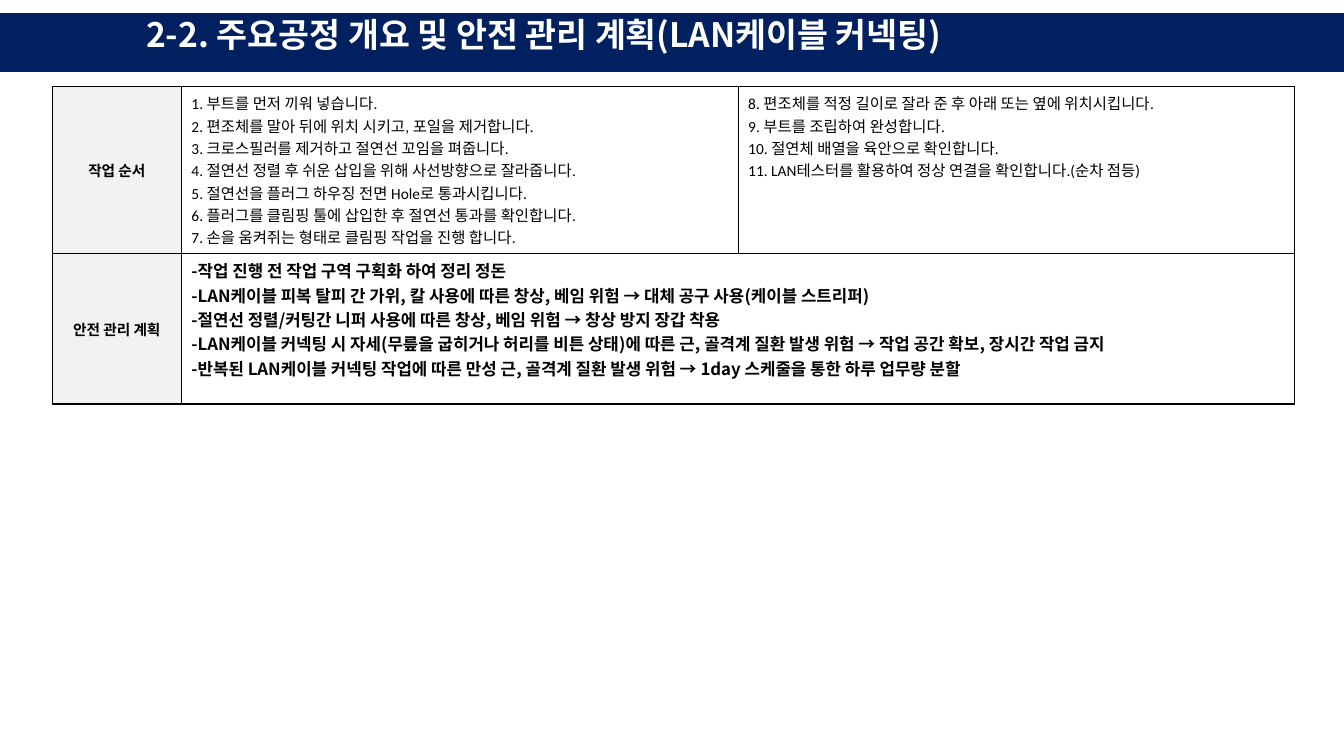
"""Build the LAN cable connecting slide: work order and safety plan."""
from dataclasses import dataclass

from lxml import etree
from pptx import Presentation
from pptx.dml.color import RGBColor
from pptx.enum.shapes import MSO_SHAPE
from pptx.enum.text import MSO_ANCHOR, MSO_AUTO_SIZE, PP_ALIGN
from pptx.oxml.ns import qn
from pptx.slide import Slide
from pptx.table import _Cell
from pptx.text.text import TextFrame
from pptx.util import Length, Pt

RECTANGLE = MSO_SHAPE.RECTANGLE
TOP, MIDDLE = MSO_ANCHOR.TOP, MSO_ANCHOR.MIDDLE
LEFT, CENTER = PP_ALIGN.LEFT, PP_ALIGN.CENTER
NO_AUTOFIT = MSO_AUTO_SIZE.NONE
TITLE_ONLY = 5


@dataclass(frozen=True)
class Theme:
    """Colours, fonts and type sizes of the slide."""
    navy: RGBColor = RGBColor(0x00, 0x20, 0x60)
    white: RGBColor = RGBColor(0xFF, 0xFF, 0xFF)
    black: RGBColor = RGBColor(0x00, 0x00, 0x00)
    grey: RGBColor = RGBColor(0xF2, 0xF2, 0xF2)
    korean: str = "Noto Sans CJK KR"
    latin: str = "Calibri"
    title: Length = Pt(24)
    label: Length = Pt(10.5)
    step: Length = Pt(11)
    safety: Length = Pt(12)
    border: Length = Pt(1)


THEME = Theme()


@dataclass(frozen=True)
class TextStyle:
    """Look of the paragraphs in one text frame."""
    size: Length
    font: str
    bold: bool = True
    color: RGBColor = THEME.black
    align: PP_ALIGN = LEFT


@dataclass(frozen=True)
class CellContent:
    """Place, wording and look of one table cell."""
    row: int
    column: int
    lines: tuple[str, ...]
    style: TextStyle
    fill: RGBColor = THEME.white
    anchor: MSO_ANCHOR = TOP


TITLE = TextStyle(THEME.title, THEME.korean, color=THEME.white)
LABEL = TextStyle(THEME.label, THEME.latin, align=CENTER)
STEP = TextStyle(THEME.step, THEME.latin, bold=False)
SAFETY = TextStyle(THEME.safety, THEME.korean)

TITLE_TEXT = "2-2. 주요공정 개요 및 안전 관리 계획(LAN케이블 커넥팅)"
STEPS = (
    "부트를 먼저 끼워 넣습니다.",
    "편조체를 말아 뒤에 위치 시키고, 포일을 제거합니다.",
    "크로스필러를 제거하고 절연선 꼬임을 펴줍니다.",
    "절연선 정렬 후 쉬운 삽입을 위해 사선방향으로 잘라줍니다.",
    "절연선을 플러그 하우징 전면 Hole로 통과시킵니다.",
    "플러그를 클림핑 툴에 삽입한 후 절연선 통과를 확인합니다.",
    "손을 움켜쥐는 형태로 클림핑 작업을 진행 합니다.",
    "편조체를 적정 길이로 잘라 준 후 아래 또는 옆에 위치시킵니다.",
    "부트를 조립하여 완성합니다.",
    "절연체 배열을 육안으로 확인합니다.",
    "LAN테스터를 활용하여 정상 연결을 확인합니다.(순차 점등)",
)
NUMBERED_STEPS = tuple(f"{number}. {step}" for number, step in enumerate(STEPS, 1))
FIRST_COLUMN_STEPS = 7
SAFETY_PLAN = (
    "-작업 진행 전 작업 구역 구획화 하여 정리 정돈",
    "-LAN케이블 피복 탈피 간 가위, 칼 사용에 따른 창상, 베임 위험 → 대체 공구 사용(케이블 스트리퍼)",
    "-절연선 정렬/커팅간 니퍼 사용에 따른 창상, 베임 위험 → 창상 방지 장갑 착용",
    "-LAN케이블 커넥팅 시 자세(무릎을 굽히거나 허리를 비튼 상태)에 따른 근, 골격계 질환 발생 위험 "
    "→ 작업 공간 확보, 장시간 작업 금지",
    "-반복된 LAN케이블 커넥팅 작업에 따른 만성 근, 골격계 질환 발생 위험 "
    "→ 1day 스케줄을 통한 하루 업무량 분할",
)
CELLS = (
    CellContent(0, 0, ("작업 순서",), LABEL, THEME.grey, MIDDLE),
    CellContent(0, 1, NUMBERED_STEPS[:FIRST_COLUMN_STEPS], STEP),
    CellContent(0, 2, NUMBERED_STEPS[FIRST_COLUMN_STEPS:], STEP),
    CellContent(1, 0, ("안전 관리 계획",), LABEL, THEME.grey, MIDDLE),
    CellContent(1, 1, SAFETY_PLAN, SAFETY),
)
COLUMN_WIDTHS = (Pt(92.2), Pt(397.7), Pt(397.7))
ROW_HEIGHTS = (Pt(107.7), Pt(107.7))


def write_lines(frame: TextFrame, lines: tuple[str, ...], style: TextStyle) -> None:
    """Write one paragraph per line in the given style."""
    for index, line in enumerate(lines):
        para = frame.paragraphs[0] if index == 0 else frame.add_paragraph()
        para.alignment = style.align
        span = para.add_run()
        span.text = line
        span.font.size = style.size
        span.font.bold = style.bold
        span.font.name = style.font
        span.font.color.rgb = style.color
        properties = span.font._element
        east_asian = etree.SubElement(properties, qn("a:ea"))
        east_asian.set("typeface", THEME.korean)


def draw_borders(cell: _Cell) -> None:
    """Draw a solid line on all four sides of a cell."""
    properties = cell._tc.get_or_add_tcPr()
    for index, side in enumerate(("a:lnL", "a:lnR", "a:lnT", "a:lnB")):
        line = etree.Element(qn(side), w=str(THEME.border))
        fill = etree.SubElement(line, qn("a:solidFill"))
        etree.SubElement(fill, qn("a:srgbClr"), val=str(THEME.black))
        properties.insert(index, line)


def draw_title(page: Slide) -> None:
    """Draw the navy bar and set the title on top of it."""
    bar = page.shapes.add_shape(RECTANGLE, Pt(0), Pt(10), Pt(960), Pt(41))
    bar.shadow.inherit = False
    bar.fill.solid()
    bar.fill.fore_color.rgb = THEME.navy
    bar.line.color.rgb = THEME.navy
    bar.line.width = THEME.border

    title = page.shapes.title
    title.left, title.top, title.width, title.height = Pt(97.2), Pt(10), Pt(765.4), Pt(41)
    frame = title.text_frame
    frame.auto_size = NO_AUTOFIT
    frame.word_wrap = True
    frame.vertical_anchor = TOP
    frame.margin_top = frame.margin_bottom = Pt(0)
    write_lines(frame, (TITLE_TEXT,), TITLE)
    bar.element.addnext(title.element)


def draw_plan(page: Slide) -> None:
    """Draw the table of work steps and safety measures."""
    table = page.shapes.add_table(
        len(ROW_HEIGHTS), len(COLUMN_WIDTHS), Pt(37.4), Pt(62),
        sum(COLUMN_WIDTHS), sum(ROW_HEIGHTS),
    ).table
    table.first_row = table.horz_banding = False
    for column, width in zip(table.columns, COLUMN_WIDTHS):
        column.width = width
    for row, height in zip(table.rows, ROW_HEIGHTS):
        row.height = height
    table.cell(1, 1).merge(table.cell(1, 2))
    for content in CELLS:
        cell = table.cell(content.row, content.column)
        cell.vertical_anchor = content.anchor
        write_lines(cell.text_frame, content.lines, content.style)
    for cell in table.iter_cells():
        cell.fill.solid()
        cell.fill.fore_color.rgb = THEME.white
        draw_borders(cell)
    for content in CELLS:
        table.cell(content.row, content.column).fill.fore_color.rgb = content.fill


def main() -> None:
    """Build and save the deck."""
    deck = Presentation()
    deck.slide_width, deck.slide_height = Pt(960), Pt(540)
    page = deck.slides.add_slide(deck.slide_layouts[TITLE_ONLY])
    draw_title(page)
    draw_plan(page)
    deck.save("out.pptx")


if __name__ == "__main__":
    main()
